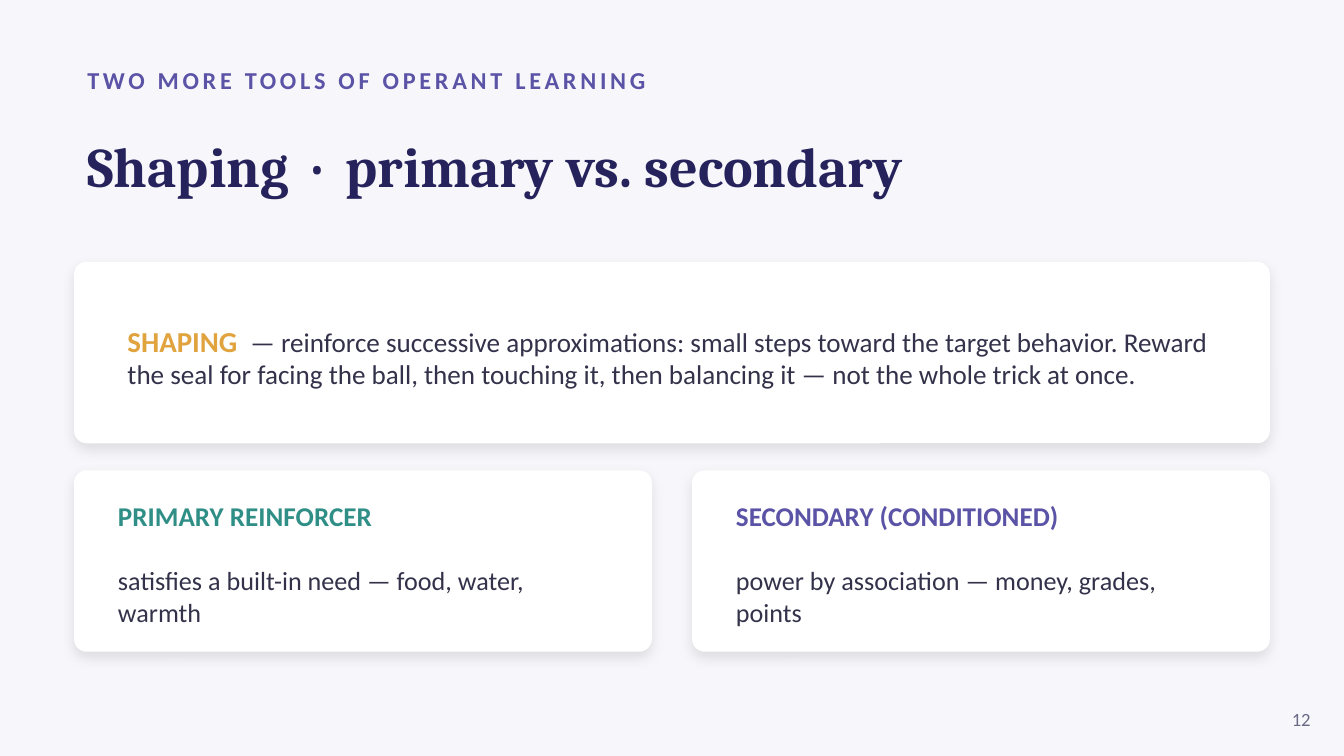
from dataclasses import dataclass

from lxml import etree
from pptx import Presentation
from pptx.dml.color import RGBColor
from pptx.enum.shapes import MSO_SHAPE
from pptx.enum.text import MSO_ANCHOR, MSO_AUTO_SIZE, PP_ALIGN
from pptx.oxml.ns import qn
from pptx.util import Cm, Pt

ROUND = MSO_SHAPE.ROUNDED_RECTANGLE
MIDDLE = MSO_ANCHOR.MIDDLE
FIXED = MSO_AUTO_SIZE.NONE
LEFT, RIGHT = PP_ALIGN.LEFT, PP_ALIGN.RIGHT


@dataclass(frozen=True)
class Theme:
    # Colours
    back: str = "F7F7FB"
    card: str = "FFFFFF"
    navy: str = "26235C"
    violet: str = "5B53A6"
    teal: str = "2F8F86"
    amber: str = "E0A33E"
    ink: str = "33324A"
    muted: str = "6B6A86"
    # Fonts
    head: str = "Cambria"
    body: str = "Calibri"
    # Type sizes
    title: float = 30
    key: float = 15.5
    lead: float = 14.5
    text: float = 14
    label: float = 13
    small: float = 10


def paint(fill, color):
    fill.solid()
    fill.fore_color.rgb = RGBColor.from_string(color)


def write(para, text, *, size, color, font, bold=False, track=0):
    run = para.add_run()
    run.text = text
    run.font.name = font
    run.font.size = Pt(size)
    run.font.bold = bold
    run.font.color.rgb = RGBColor.from_string(color)
    if track:
        run.font._element.set("spc", str(track * 100))


class Deck:
    def __init__(self, theme):
        self.theme = theme
        self.prs = Presentation()
        self.prs.slide_width, self.prs.slide_height = Cm(25.4), Cm(14.29)
        self.slide = self.prs.slides.add_slide(self.prs.slide_layouts[5])
        paint(self.slide.background.fill, theme.back)

    def frame(self, shape, align=LEFT):
        """Set up a text frame and return its first paragraph."""
        frame = shape.text_frame
        frame.word_wrap = True
        frame.auto_size = FIXED
        frame.vertical_anchor = MIDDLE
        para = frame.paragraphs[0]
        para.alignment = align
        return para

    def title(self, text, x, y, w, h):
        box = self.slide.shapes.title
        box.left, box.top, box.width, box.height = map(Cm, (x, y, w, h))
        t = self.theme
        write(self.frame(box), text, size=t.title, color=t.navy,
              font=t.head, bold=True)

    def box(self, x, y, w, h, align=LEFT):
        shape = self.slide.shapes.add_textbox(*map(Cm, (x, y, w, h)))
        return shape, self.frame(shape, align)

    def line(self, text, x, y, w, h, align=LEFT, **style):
        para = self.box(x, y, w, h, align)[1]
        write(para, text, font=self.theme.body, **style)

    def card(self, x, y, w, h):
        card = self.slide.shapes.add_shape(ROUND, *map(Cm, (x, y, w, h)))
        card.adjustments[0] = 0.07
        paint(card.fill, self.theme.card)
        card.line.fill.background()
        # Soft shadow straight below
        card.shadow.inherit = False
        glow = card._element.spPr.find(qn("a:effectLst"))
        shade = etree.SubElement(
            glow, qn("a:outerShdw"), blurRad=str(Pt(7)), dist=str(Pt(3)),
            dir="5400000", algn="bl", rotWithShape="0")
        black = etree.SubElement(shade, qn("a:srgbClr"), val="000000")
        etree.SubElement(black, qn("a:alpha"), val="10000")

    def term(self, key, text, x, y, w, h):
        """A key word that runs on into its meaning."""
        t = self.theme
        para = self.box(x, y, w, h)[1]
        write(para, key, size=t.key, color=t.amber, font=t.body, bold=True)
        write(para, text, size=t.lead, color=t.ink, font=t.body)

    def note(self, head, text, color, x, y, w, h):
        """A heading with its text spaced below."""
        t = self.theme
        shape, para = self.box(x, y, w, h)
        para.space_after = Pt(17.5)
        write(para, head, size=t.lead, color=color, font=t.body, bold=True)
        para = shape.text_frame.add_paragraph()
        write(para, text, size=t.text, color=t.ink, font=t.body)


def main():
    t = Theme()
    deck = Deck(t)
    left, wide, tall = 1.4, 22.6, 3.43

    # Heading
    deck.line("TWO MORE TOOLS OF OPERANT LEARNING", left, 1.07, 22.86, 0.89,
              size=t.label, color=t.violet, bold=True, track=2)
    deck.title("Shaping  ·  primary vs. secondary", left, 1.98, wide, 2.29)

    # Shaping card
    deck.card(left, 4.95, wide, tall)
    deck.term("SHAPING  ",
              "— reinforce successive approximations: small steps toward the "
              "target behavior. Reward the seal for facing the ball, then "
              "touching it, then balancing it — not the whole trick at once.",
              left + 0.76, 5.54, 21.08, 2.41)

    # Reinforcer cards
    gap, pad, top = 0.76, 0.58, 8.89
    width = (wide - gap) / 2
    notes = [
        ("PRIMARY REINFORCER",
         "satisfies a built-in need — food, water, warmth", t.teal),
        ("SECONDARY (CONDITIONED)",
         "power by association — money, grades, points", t.violet),
    ]
    for i, (head, text, color) in enumerate(notes):
        x = left + i * (width + gap)
        deck.card(x, top, width, tall)
        deck.note(head, text, color, x + pad, top + 0.56,
                  width - 2 * pad, 2.41)

    # Page number
    deck.line("12", 23.75, 13.21, 1.27, 0.76, RIGHT,
              size=t.small, color=t.muted)

    deck.prs.save("out.pptx")


if __name__ == "__main__":
    main()
